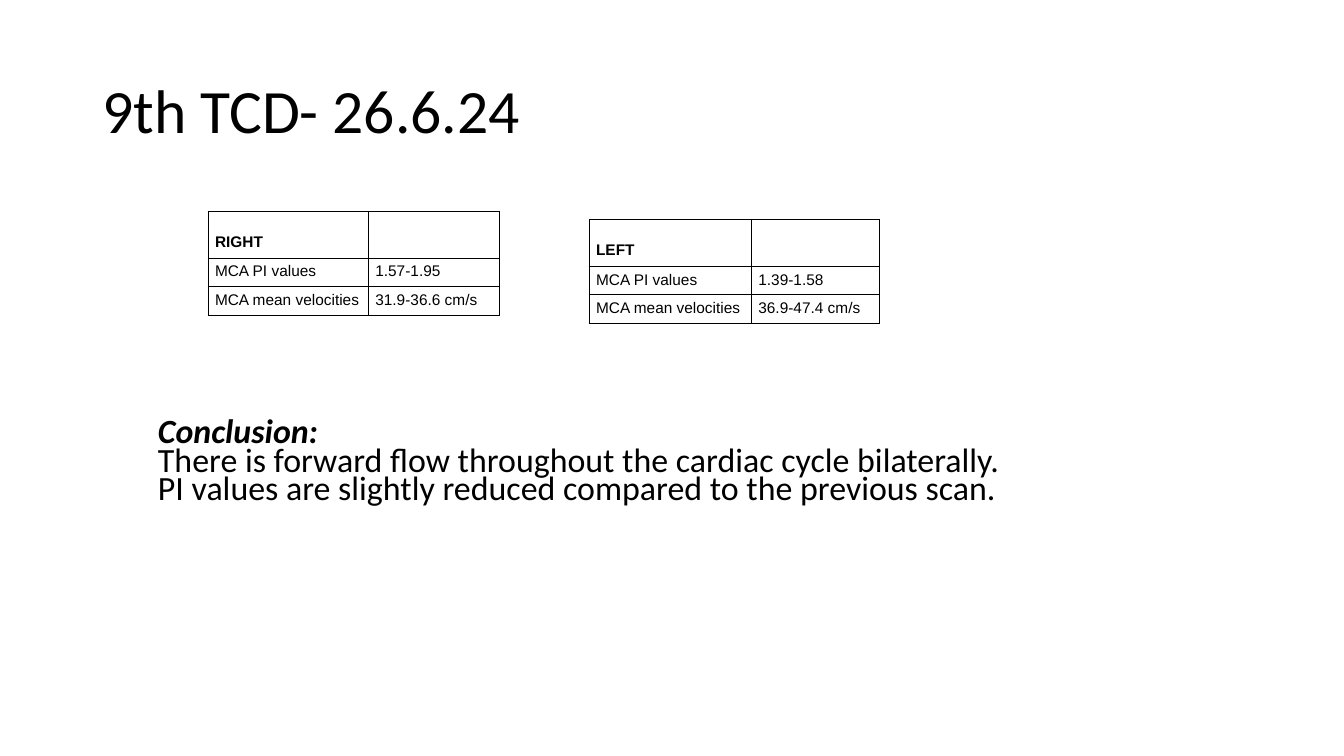
from lxml import etree
from pptx import Presentation
from pptx.dml.color import RGBColor
from pptx.enum import text
from pptx.oxml import ns
from pptx.util import Pt

BLACK = RGBColor(0, 0, 0)
WHITE = RGBColor(255, 255, 255)

TITLE = "9th TCD- 26.6.24"
SCANS = [
    {"left": 148.6, "top": 150.9, "widths": (114.5, 93.6),
     "rows": [("RIGHT", ""),
              ("MCA PI values", "1.57-1.95"),
              ("MCA mean velocities", "31.9-36.6 cm/s")]},
    {"left": 420.8, "top": 156.7, "widths": (115.9, 91.5),
     "rows": [("LEFT", ""),
              ("MCA PI values", "1.39-1.58"),
              ("MCA mean velocities", "36.9-47.4 cm/s")]},
]
CONCLUSION = [
    "Conclusion:",
    "There is forward flow throughout the cardiac cycle bilaterally.",
    "PI values are slightly reduced compared to the previous scan.",
]

ROW_HEIGHTS = (33.4, 20.5, 20.5)
BORDER = 0.75
CELL_MARGINS = {"margin_left": Pt(5), "margin_right": Pt(5),
                "margin_top": Pt(3.6), "margin_bottom": Pt(3.6)}
HEADING_DROP = 12.6  # one line of 11 pt text above each heading

TITLE_FONT = {"name": "Calibri", "size": Pt(44), "bold": False}
CELL_FONT = {"name": "Arial", "size": Pt(11), "bold": False}
HEADING_FONT = {**CELL_FONT, "bold": True}
BODY_FONT = {"name": "Calibri", "size": Pt(24.2), "bold": False, "italic": False}
LEAD_FONT = {**BODY_FONT, "bold": True, "italic": True}


def set_all(target, values):
    for name, value in values.items():
        setattr(target, name, value)


def write(paragraph, words, font, spacing=1.0):
    run = paragraph.add_run()
    run.text = words
    set_all(run.font, font)
    run.font.color.rgb = BLACK
    set_all(paragraph, {"alignment": text.PP_ALIGN.LEFT, "line_spacing": spacing})


def add_borders(cell):
    properties = cell._tc.get_or_add_tcPr()
    for side in ("lnL", "lnR", "lnT", "lnB"):
        line = etree.SubElement(properties, ns.qn(f"a:{side}"), w=str(Pt(BORDER)))
        fill = etree.SubElement(line, ns.qn("a:solidFill"))
        etree.SubElement(fill, ns.qn("a:srgbClr"), val=str(BLACK))


def add_scan(slide, scan):
    rows, widths = scan["rows"], scan["widths"]
    table = slide.shapes.add_table(
        len(rows), len(widths), Pt(scan["left"]), Pt(scan["top"]),
        Pt(sum(widths)), Pt(sum(ROW_HEIGHTS))).table
    set_all(table, {"first_row": False, "horz_banding": False})
    for column, width in zip(table.columns, widths):
        column.width = Pt(width)
    for r, (row, height) in enumerate(zip(rows, ROW_HEIGHTS)):
        table.rows[r].height = Pt(height)
        for c, words in enumerate(row):
            cell = table.cell(r, c)
            set_all(cell, CELL_MARGINS)
            add_borders(cell)
            cell.fill.solid()
            cell.fill.fore_color.rgb = WHITE
            if words:
                write(cell.text_frame.paragraphs[0], words,
                      CELL_FONT if r else HEADING_FONT)
    table.cell(0, 0).margin_top += Pt(HEADING_DROP)


def main():
    deck = Presentation()
    set_all(deck, {"slide_width": Pt(960), "slide_height": Pt(540)})
    slide = deck.slides.add_slide(deck.slide_layouts[5])

    title = slide.shapes.title
    set_all(title, {"left": Pt(66), "top": Pt(28.75),
                    "width": Pt(828), "height": Pt(104.4)})
    title.text_frame.vertical_anchor = text.MSO_ANCHOR.MIDDLE
    write(title.text_frame.paragraphs[0], TITLE, TITLE_FONT, 0.9)

    conclusion = slide.shapes.add_textbox(
        Pt(105.8), Pt(282.2), Pt(630.7), Pt(97.9)).text_frame
    set_all(conclusion, {"word_wrap": True,
                         "vertical_anchor": text.MSO_ANCHOR.MIDDLE})
    for i, words in enumerate(CONCLUSION):
        paragraph = conclusion.add_paragraph() if i else conclusion.paragraphs[0]
        write(paragraph, words, BODY_FONT if i else LEAD_FONT, 0.7)

    for scan in SCANS:
        add_scan(slide, scan)
    deck.save("out.pptx")


if __name__ == "__main__":
    main()
